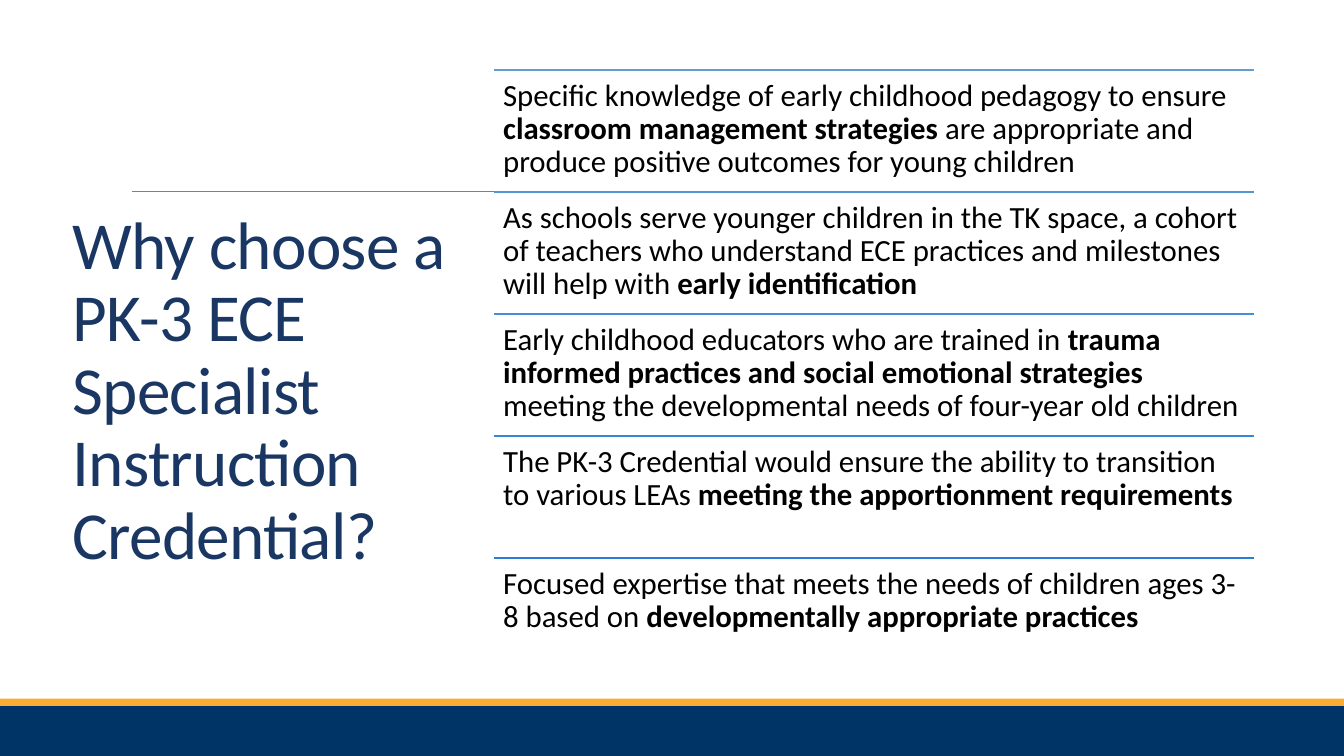
from pptx import Presentation
from pptx.dml.color import RGBColor
from pptx.enum.shapes import MSO_CONNECTOR, MSO_SHAPE
from pptx.enum.text import MSO_ANCHOR, MSO_AUTO_SIZE, PP_ALIGN
from pptx.oxml.ns import qn
from pptx.util import Pt
from lxml import etree

STRAIGHT = MSO_CONNECTOR.STRAIGHT
RECT = MSO_SHAPE.RECTANGLE
MIDDLE, TOP = MSO_ANCHOR.MIDDLE, MSO_ANCHOR.TOP
LEFT = PP_ALIGN.LEFT
NO_FIT = MSO_AUTO_SIZE.NONE

NAVY = RGBColor(0x00, 0x33, 0x66)
GOLD = RGBColor(0xFA, 0xAC, 0x35)
GREY = RGBColor(0x80, 0x80, 0x80)
INK = RGBColor(0x1A, 0x37, 0x63)
BLACK = RGBColor(0x00, 0x00, 0x00)
BLUES = [
    RGBColor(0x62, 0x9D, 0xD1),
    RGBColor(0x54, 0x96, 0xD2),
    RGBColor(0x46, 0x8E, 0xD2),
    RGBColor(0x37, 0x87, 0xD4),
    RGBColor(0x29, 0x7F, 0xD5),
]

FONT = "Calibri"
WIDE, HIGH = 960, 540
LIST_X, LIST_Y = 352.8, 50.2
LIST_W, ROW_H = 543.2, 87.12
INSET = 6.6

TITLE = "Why choose a PK-3 ECE Specialist Instruction Credential?"

# Each reason is a list of (text, bold) runs
REASONS = [
    [("Specific knowledge of early childhood pedagogy to ensure ", False),
     ("classroom management strategies ", True),
     ("are appropriate and produce positive outcomes for young children", False)],
    [("As schools serve younger children in the TK space, a cohort of teachers "
      "who understand ECE practices and milestones will help with ", False),
     ("early identification", True)],
    [("Early childhood educators who are trained in ", False),
     ("trauma informed practices and social emotional strategies ", True),
     ("meeting the developmental needs of four-year old children", False)],
    [("The PK-3 Credential would ensure the ability to transition to various "
      "LEAs ", False),
     ("meeting the apportionment requirements", True)],
    [("Focused expertise that meets the needs of children ages 3-8 based on ",
      False),
     ("developmentally appropriate practices", True)],
]


def add_band(slide, top, height, color):
    band = slide.shapes.add_shape(RECT, 0, Pt(top), Pt(WIDE), Pt(height))
    band.shadow.inherit = False
    band.fill.solid()
    band.fill.fore_color.rgb = color
    band.line.fill.background()


def add_rule(slide, left, right, y, color, weight):
    rule = slide.shapes.add_connector(
        STRAIGHT, Pt(left), Pt(y), Pt(right), Pt(y))
    rule.line.color.rgb = color
    rule.line.width = Pt(weight)
    etree.SubElement(rule._element.spPr, qn("a:effectLst"))


def add_run(para, text, size, color, bold=False):
    run = para.add_run()
    run.text = text
    run.font.name = FONT
    run.font.size = Pt(size)
    run.font.bold = bold
    run.font.color.rgb = color
    return run


def set_title(slide):
    title = slide.shapes.title
    title.left, title.top = Pt(44.6), Pt(83.5)
    title.width, title.height = Pt(308.2), Pt(393.8)
    frame = title.text_frame
    frame.word_wrap = True
    frame.auto_size = NO_FIT
    frame.vertical_anchor = MIDDLE
    para = frame.paragraphs[0]
    para.alignment = LEFT
    para.line_spacing = 0.9
    run = add_run(para, TITLE, 48, INK)
    run.font._element.set("spc", "-50")


def add_reason(slide, top, parts):
    box = slide.shapes.add_textbox(
        Pt(LIST_X), Pt(top), Pt(LIST_W), Pt(ROW_H))
    frame = box.text_frame
    frame.word_wrap = True
    frame.vertical_anchor = TOP
    frame.margin_left = frame.margin_right = Pt(INSET)
    frame.margin_top = frame.margin_bottom = Pt(INSET)
    para = frame.paragraphs[0]
    para.alignment = LEFT
    para.line_spacing = 0.9
    for text, bold in parts:
        add_run(para, text, 22, BLACK, bold)


def main():
    deck = Presentation()
    deck.slide_width, deck.slide_height = Pt(WIDE), Pt(HIGH)
    slide = deck.slides.add_slide(deck.slide_layouts[5])

    # Footer bands and the thin grey rule
    add_band(slide, 504, 36, NAVY)
    add_band(slide, 499, 5, GOLD)
    add_rule(slide, 94.3, 879, 136.6, GREY, 0.5)

    # Title on the left
    set_title(slide)

    # Ruled list of reasons on the right
    for row, (parts, blue) in enumerate(zip(REASONS, BLUES)):
        top = LIST_Y + row * ROW_H
        add_rule(slide, LIST_X, LIST_X + LIST_W, top, blue, 1.25)
        add_reason(slide, top, parts)

    deck.save("out.pptx")


if __name__ == "__main__":
    main()
